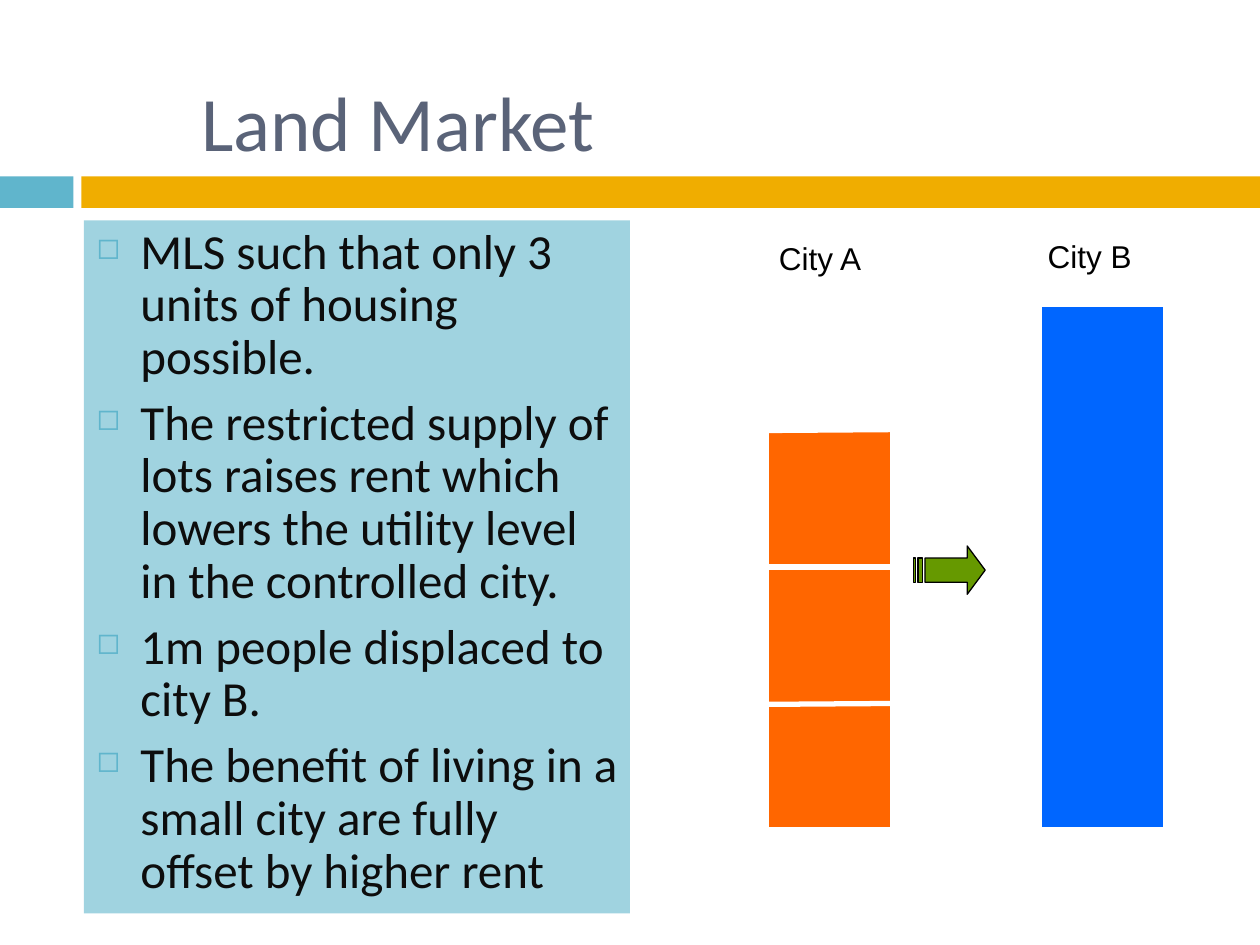
from lxml.etree import SubElement
from pptx import Presentation
from pptx.dml.color import RGBColor as Rgb
from pptx.enum.shapes import MSO_CONNECTOR as Connector, MSO_SHAPE as Shape
from pptx.enum.text import MSO_ANCHOR as Anchor, MSO_AUTO_SIZE as AutoSize
from pptx.oxml.ns import qn
from pptx.util import Pt

COLORS = {
    "accent": "60B5CC", "band": "F0AD00", "title": "5A6378", "panel": "A0D3E0",
    "body": "0D0D0D", "city_a": "FF6600", "city_b": "0066FF", "arrow": "669900",
    "black": "000000", "white": "FFFFFF",
}


class SlideBuilder:
    """Draws styled elements on one slide, with lengths in points."""

    def __init__(self, slide):
        self.slide = slide
        self.shapes = slide.shapes

    def color(self, name):
        return Rgb.from_string(COLORS[name])

    def paint(self, shape, fill, line=None, weight=3):
        shape.shadow.inherit = False
        shape.fill.solid()
        shape.fill.fore_color.rgb = self.color(fill)
        if line:
            shape.line.color.rgb = self.color(line)
            shape.line.width = Pt(weight)
        else:
            shape.line.fill.background()
        return shape

    def style(self, paragraph, font, size, color):
        for run in paragraph.runs:
            run.font.name = font
            run.font.size = Pt(size)
            run.font.color.rgb = self.color(color)

    def block(self, left, top, width, height, fill, line=None):
        box = self.shapes.add_shape(Shape.RECTANGLE, Pt(left), Pt(top), Pt(width), Pt(height))
        return self.paint(box, fill, line)

    def text(self, words, left, top, width, height, font, size, color, wrap=True):
        box = self.shapes.add_textbox(Pt(left), Pt(top), Pt(width), Pt(height))
        frame = box.text_frame
        frame.word_wrap = wrap
        frame.auto_size = AutoSize.NONE if wrap else AutoSize.SHAPE_TO_FIT_TEXT
        frame.vertical_anchor = Anchor.MIDDLE if wrap else Anchor.TOP
        frame.text = words
        self.style(frame.paragraphs[0], font, size, color)

    def bullets(self, points, left, top, width, height):
        frame = self.shapes.add_textbox(Pt(left), Pt(top), Pt(width), Pt(height)).text_frame
        frame.word_wrap = True
        frame.text = "\n".join(points)
        for paragraph in frame.paragraphs:
            paragraph.line_spacing = 0.9
            paragraph.space_before = Pt(7)
            self.style(paragraph, "Calibri", 28, "body")
            props = paragraph._p.get_or_add_pPr()
            props.set("marL", str(Pt(25.2)))
            props.set("indent", str(-Pt(25.2)))
            tint = SubElement(props, qn("a:buClr"))
            SubElement(tint, qn("a:srgbClr"), val=COLORS["accent"])
            SubElement(props, qn("a:buSzPct"), val="60000")
            SubElement(props, qn("a:buChar"), char="◻")

    def divider(self, start, end):
        ends = [Pt(value) for value in (*start, *end)]
        line = self.shapes.add_connector(Connector.STRAIGHT, *ends)
        line.line.color.rgb = self.color("white")
        line.line.width = Pt(3)
        SubElement(line._element.spPr, qn("a:effectLst"))

    def outline(self, contours, fill, line, weight):
        contours = [[(Pt(x), Pt(y)) for x, y in contour] for contour in contours]
        builder = self.shapes.build_freeform(*contours[0][0])
        for index, (start, *rest) in enumerate(contours):
            if index:
                builder.move_to(*start)
            builder.add_line_segments(rest, close=True)
        self.paint(builder.convert_to_shape(), fill, line, weight)

    def striped_arrow(self, left, top, width, height):
        upper, lower = top + height / 4, top + height * 3 / 4
        tip, neck = left + width, left + width * 0.75
        head = [(neck, top), (neck, upper), (left + 6.6, upper), (left + 6.6, lower),
                (neck, lower), (neck, top + height), (tip, top + height / 2)]
        stripes = [
            [(left + a, upper), (left + a, lower), (left + b, lower), (left + b, upper)]
            for a, b in ((2.6, 5.2), (0, 1.3))
        ]
        self.outline([head, *stripes], "arrow", "black", 0.75)


def main():
    deck = Presentation()
    deck.slide_width, deck.slide_height = Pt(720), Pt(540)
    page = SlideBuilder(deck.slides.add_slide(deck.slide_layouts[6]))

    page.block(0, 100.8, 42, 18, "accent")
    page.block(46.5, 100.8, 673.5, 18, "band")
    page.text("Land Market", 108, 24, 576, 90, "Calibri", 44, "title")

    panel = (48, 126, 312, 396)
    page.block(*panel, "panel")
    page.bullets([
        "MLS such that only 3 units of housing possible.",
        "The restricted supply of lots raises rent which lowers the utility level "
        "in the controlled city.",
        "1m people displaced to city B.",
        "The benefit of living in a small city are fully offset by higher rent",
    ], *panel)

    city_a, city_b, bar_top, bar_width, bar_height = 438, 594, 174, 72, 300
    page.block(city_a, bar_top, bar_width, bar_height, "city_a", "white")
    for right_y, left_y in ((324, 324), (402, 402.5), (245.5, 246)):
        page.divider((city_a + bar_width, right_y), (city_a, left_y))
    page.striped_arrow(522, 312, 41, 27.6)
    page.block(city_b, bar_top, bar_width, bar_height, "city_b", "white")
    for name, left, top in (("City A", 438, 133.2), ("City B", 591.6, 132)):
        page.text(name, left, top, 62.6, 28.8, "Arial", 18, "black", wrap=False)
    page.block(city_a, bar_top, bar_width, 72, "white")

    deck.save("out.pptx")


if __name__ == "__main__":
    main()
